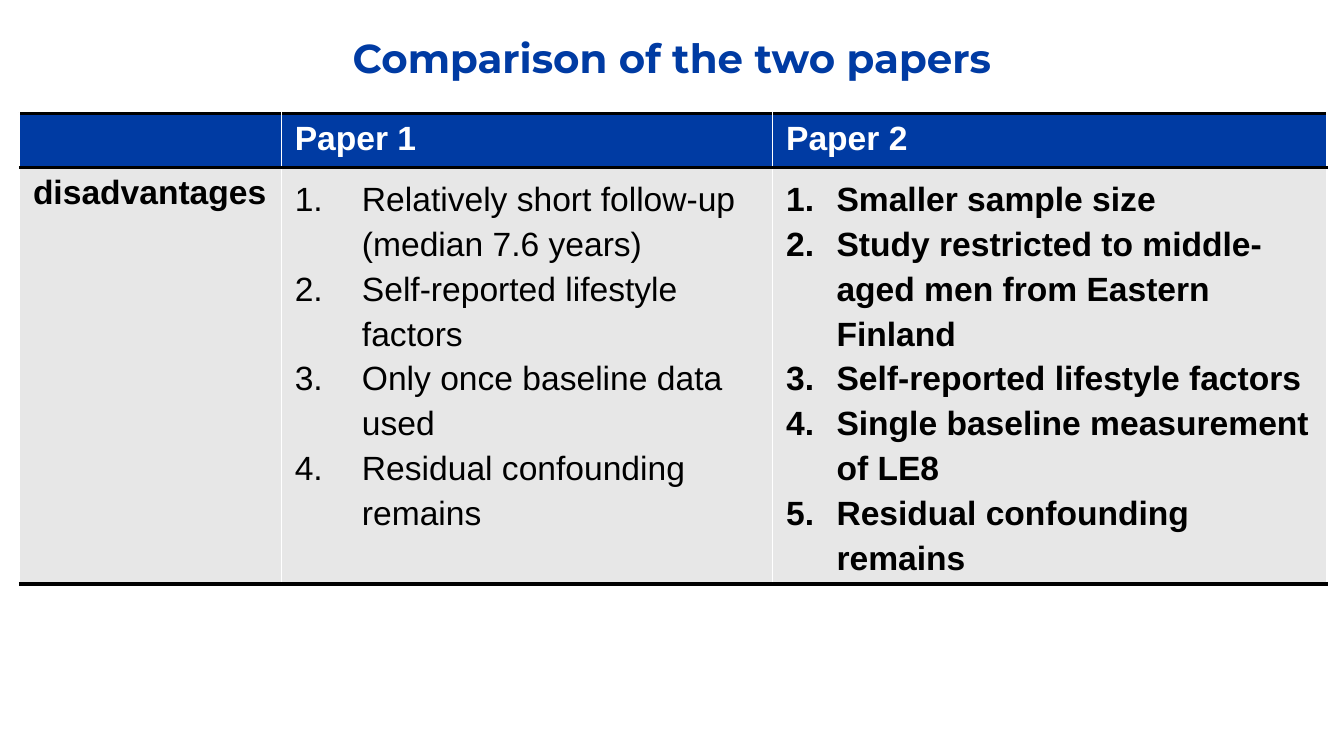
from pptx import Presentation
from pptx.dml.color import RGBColor
from pptx.enum.text import MSO_ANCHOR as Anchor, PP_ALIGN as Align
from pptx.oxml import parse_xml
from pptx.oxml.ns import nsdecls
from pptx.util import Pt

PX = 9525
BLUE = RGBColor(0x00, 0x3B, 0xA3)
GRAY = RGBColor(0xE7, 0xE7, 0xE7)
BLACK = RGBColor(0, 0, 0)
WHITE = RGBColor(255, 255, 255)

TITLE = "Comparison of the two papers"
COLUMNS = [187, 351, 396]
ROWS = [38, 240]
HEADINGS = ["", "Paper 1", "Paper 2"]
PAPER_1 = [
    "Relatively short follow-up (median 7.6 years)",
    "Self-reported lifestyle factors",
    "Only once baseline data used",
    "Residual confounding remains",
]
PAPER_2 = [
    "Smaller sample size",
    "Study restricted to middle-aged men from Eastern Finland",
    "Self-reported lifestyle factors",
    "Single baseline measurement of LE8",
    "Residual confounding remains",
]


def style_runs(paragraph, font_name, size, color, bold=True):
    for run in paragraph.runs:
        run.font.name = font_name
        run.font.size = Pt(size)
        run.font.bold = bold
        run.font.color.rgb = color


def add_title(slide, left, top, width, height):
    heading = slide.shapes.add_textbox(left * PX, top * PX, width * PX, height * PX)
    frame = heading.text_frame
    frame.word_wrap = True
    frame.vertical_anchor = Anchor.TOP
    frame.margin_top = frame.margin_bottom = 10 * PX
    frame.text = TITLE
    frame.paragraphs[0].alignment = Align.CENTER
    style_runs(frame.paragraphs[0], "Montserrat", 21.6, BLUE)


def set_borders(cell, sides):
    properties = cell._tc.get_or_add_tcPr()
    for position, (side, color, points) in enumerate(sides):
        border = parse_xml(
            f'<a:ln{side} {nsdecls("a")} w="{int(Pt(points))}"><a:solidFill>'
            f'<a:srgbClr val="{color}"/></a:solidFill></a:ln{side}>'
        )
        properties.insert(position, border)


def fill_cell(cell, text, fill, color, bold=True):
    cell.fill.solid()
    cell.fill.fore_color.rgb = fill
    cell.text_frame.text = text
    for paragraph in cell.text_frame.paragraphs:
        style_runs(paragraph, "Arial", 18, color, bold)


def number_paragraphs(cell, indent):
    for paragraph in cell.text_frame.paragraphs:
        paragraph.line_spacing = Pt(24)
        properties = paragraph._p.get_or_add_pPr()
        properties.set("marL", str(indent * PX))
        properties.set("indent", str(-indent * PX))
        properties.append(parse_xml(
            f'<a:buClr {nsdecls("a")}><a:srgbClr val="{BLACK}"/></a:buClr>'))
        properties.append(parse_xml(
            f'<a:buFont {nsdecls("a")} typeface="+mj-lt"/>'))
        properties.append(parse_xml(
            f'<a:buAutoNum {nsdecls("a")} type="arabicPeriod"/>'))


def add_comparison(slide, left, top, height):
    comparison = slide.shapes.add_table(
        len(ROWS), len(COLUMNS), left * PX, top * PX,
        sum(COLUMNS) * PX, height * PX,
    )
    table = comparison.table
    for column, width in zip(table.columns, COLUMNS):
        column.width = width * PX
    for row, row_height in zip(table.rows, ROWS):
        row.height = row_height * PX
    comparison.height = height * PX

    for index, heading in enumerate(HEADINGS):
        fill_cell(table.cell(0, index), heading, BLUE, WHITE)
    fill_cell(table.cell(1, 0), "disadvantages", GRAY, BLACK)
    for index, points, indent, bold in [(1, PAPER_1, 48, False), (2, PAPER_2, 36, True)]:
        cell = table.cell(1, index)
        fill_cell(cell, "\n".join(points), GRAY, BLACK, bold)
        number_paragraphs(cell, indent)

    last = len(COLUMNS) - 1
    for row in table.rows:
        for index, cell in enumerate(row.cells):
            sides = [("L", WHITE, 1)] if index > 0 else []
            sides += [("R", WHITE, 1)] if index < last else []
            set_borders(cell, sides + [("T", BLACK, 2), ("B", BLACK, 2)])


def main():
    deck = Presentation()
    deck.slide_width = 960 * PX
    deck.slide_height = 540 * PX
    slide = deck.slides.add_slide(deck.slide_layouts[6])
    add_title(slide, 48, 14, 864, 51)
    add_comparison(slide, 14, 81, 333)
    deck.save("out.pptx")


if __name__ == "__main__":
    main()
